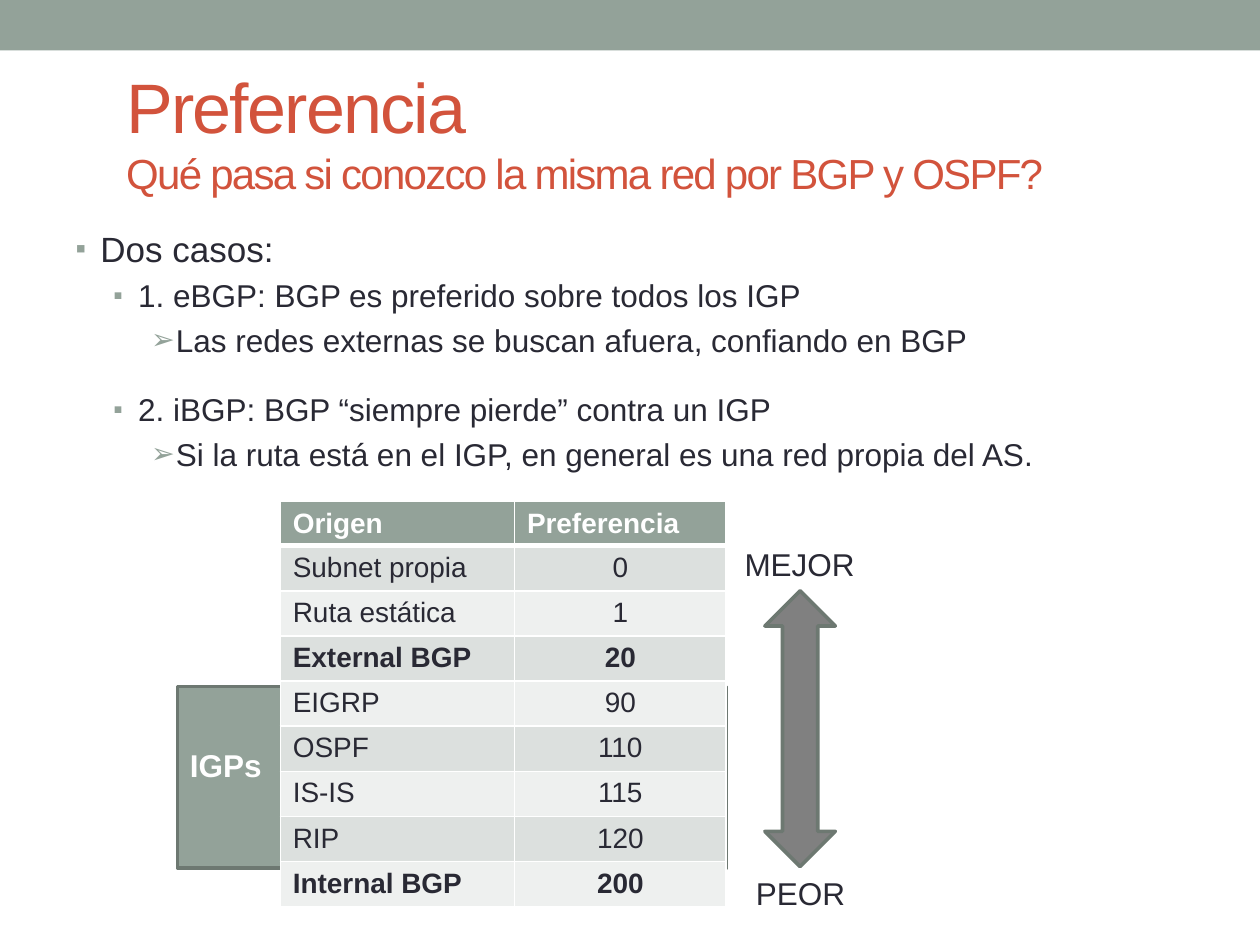
from dataclasses import dataclass

from lxml.etree import SubElement
from pptx import Presentation
from pptx.dml.color import RGBColor
from pptx.enum.shapes import MSO_SHAPE as Preset
from pptx.enum.text import MSO_ANCHOR as Anchor, MSO_AUTO_SIZE as AutoSize, PP_ALIGN as Align
from pptx.oxml import parse_xml
from pptx.oxml.ns import nsdecls, qn
from pptx.util import Cm, Pt


@dataclass(frozen=True)
class Theme:
    font: str = "Arial"
    accent: str = "93A299"
    outline: str = "6D7871"
    heading: str = "D2533C"
    ink: str = "292934"
    white: str = "FFFFFF"
    arrow: str = "808080"
    bands: tuple = ("DCE0DE", "EEF0EF")
    title_size: int = 40
    subtitle_size: int = 24
    lead_size: int = 20
    text_size: int = 18
    table_size: int = 16


def add_text(para, text, *, theme, size, color, bold=False, align=Align.LEFT, tracking=None):
    span = para.add_run()
    span.text = text
    para.alignment = align
    font = span.font
    font.name, font.size, font.bold = theme.font, Pt(size), bold
    font.color.rgb = RGBColor.from_string(color)
    if tracking is not None:
        span._r.get_or_add_rPr().set("spc", str(round(tracking * 100)))


def paint(fill, color):
    fill.solid()
    fill.fore_color.rgb = RGBColor.from_string(color)


def place(shape, left, top, width, height):
    shape.left, shape.top, shape.width, shape.height = map(Cm, (left, top, width, height))


def set_bullet(para, symbol, color, percent, left, hanging):
    """Set the bullet and its indents, in centimetres."""
    props = para._p.get_or_add_pPr()
    props.set("marL", str(Cm(left)))
    props.set("indent", str(-Cm(hanging)))
    bullet_color = SubElement(props, qn("a:buClr"))
    SubElement(bullet_color, qn("a:srgbClr"), val=color)
    SubElement(props, qn("a:buSzPct"), val=str(percent * 1000))
    SubElement(props, qn("a:buFont"), typeface="Arial")
    SubElement(props, qn("a:buChar"), char=symbol)


def set_borders(cell, color, bottom):
    """Draw 1 pt lines round the cell, with its own width at the bottom."""
    props = cell._tc.get_or_add_tcPr()
    widths = {"lnL": 1, "lnR": 1, "lnT": 1, "lnB": bottom}
    for index, (side, width) in enumerate(widths.items()):
        props.insert(index, parse_xml(
            f'<a:{side} {nsdecls("a")} w="{Pt(width)}"><a:solidFill>'
            f'<a:srgbClr val="{color}"/></a:solidFill></a:{side}>'))


class SlideBuilder:
    """Holds the theme and the slide being filled."""

    def __init__(self, deck, theme):
        self.theme = theme
        self.page = deck.slides.add_slide(deck.slide_layouts[1])

    def title(self, heading, subtitle, box):
        theme = self.theme
        shape = self.page.shapes.title
        place(shape, *box)
        frame = shape.text_frame
        frame.auto_size, frame.vertical_anchor = AutoSize.NONE, Anchor.MIDDLE
        para = frame.paragraphs[0]
        look = dict(theme=theme, color=theme.heading, tracking=-1)
        add_text(para, heading, size=theme.title_size, **look)
        para.add_line_break()
        add_text(para, subtitle, size=theme.subtitle_size, **look)

    def bullets(self, items, box):
        """Fill the body from (level, text, space before in points)."""
        theme = self.theme
        styles = (
            ("▪", 85, 0.5, theme.lead_size),
            ("▪", 85, 1.26, theme.text_size),
            ("➢", 90, 2.02, theme.text_size),
        )
        shape = self.page.placeholders[1]
        place(shape, *box)
        frame = shape.text_frame
        frame.auto_size = AutoSize.NONE
        for index, (level, text, space) in enumerate(items):
            para = frame.add_paragraph() if index else frame.paragraphs[0]
            symbol, percent, left, size = styles[level]
            para.level, para.space_before = level, Pt(space)
            set_bullet(para, symbol, theme.accent, percent, left, 0.5)
            add_text(para, text, theme=theme, size=size, color=theme.ink)

    def shape(self, preset, box, fill, line=None):
        shape = self.page.shapes.add_shape(preset, *map(Cm, box))
        shape.shadow.inherit = False
        paint(shape.fill, fill)
        if line:
            shape.line.color.rgb = RGBColor.from_string(line)
            shape.line.width = Pt(2.08)
        else:
            shape.line.fill.background()

    def label(self, text, box, color, bold=False):
        frame = self.page.shapes.add_textbox(*map(Cm, box)).text_frame
        frame.word_wrap, frame.auto_size = False, AutoSize.SHAPE_TO_FIT_TEXT
        add_text(frame.paragraphs[0], text, theme=self.theme,
                 size=self.theme.text_size, color=color, bold=bold)

    def table(self, header, rows, box, widths, bold_rows):
        theme = self.theme
        lines = [header, *rows]
        table = self.page.shapes.add_table(len(lines), len(header), *map(Cm, box)).table
        for column, width in zip(table.columns, widths):
            column.width = Cm(width)
        for index, line in enumerate(lines):
            is_header = index == 0
            table.rows[index].height = Cm(0.89 if is_header else 0.91)
            for position, value in enumerate(line):
                cell = table.cell(index, position)
                paint(cell.fill, theme.accent if is_header else theme.bands[(index - 1) % 2])
                set_borders(cell, theme.white, 3 if index == 0 else 1)
                add_text(cell.text_frame.paragraphs[0], str(value), theme=theme,
                         size=theme.table_size,
                         color=theme.white if is_header else theme.ink,
                         bold=is_header or line[0] in bold_rows,
                         align=Align.CENTER if position and not is_header else Align.LEFT)


def main():
    theme = Theme()
    deck = Presentation()
    deck.slide_width, deck.slide_height = Cm(25.4), Cm(19.05)
    slide = SlideBuilder(deck, theme)

    slide.shape(Preset.RECTANGLE, (0, 0, 25.4, 1.02), theme.accent)
    slide.shape(Preset.RECTANGLE, (3.58, 13.84, 11.07, 3.66), theme.accent, theme.outline)
    slide.title("Preferencia", "Qué pasa si conozco la misma red por BGP y OSPF?",
                (2.29, 0.61, 20.96, 4.04))
    slide.bullets([
        (0, "Dos casos:", 4),
        (1, "1. eBGP: BGP es preferido sobre todos los IGP", 4),
        (2, "Las redes externas se buscan afuera, confiando en BGP", 4),
        (1, "2. iBGP: BGP “siempre pierde” contra un IGP", 18),
        (2, "Si la ruta está en el IGP, en general es una red propia del AS.", 4),
    ], (1.27, 4.45, 22.86, 13.54))
    slide.table(
        ("Origen", "Preferencia"),
        [("Subnet propia", 0), ("Ruta estática", 1), ("External BGP", 20),
         ("EIGRP", 90), ("OSPF", 110), ("IS-IS", 115), ("RIP", 120),
         ("Internal BGP", 200)],
        (5.65, 10.11, 8.99, 8.17), (4.72, 4.27), {"External BGP", "Internal BGP"})
    slide.label("IGPs", (3.58, 14.91, 1.98, 1.02), theme.white, bold=True)
    slide.shape(Preset.UP_DOWN_ARROW, (15.42, 11.91, 1.42, 5.56), theme.arrow, theme.outline)
    slide.label("MEJOR", (14.76, 10.87, 2.77, 1.02), theme.ink)
    slide.label("PEOR", (14.99, 17.5, 2.34, 1.02), theme.ink)
    deck.save("out.pptx")


if __name__ == "__main__":
    main()
